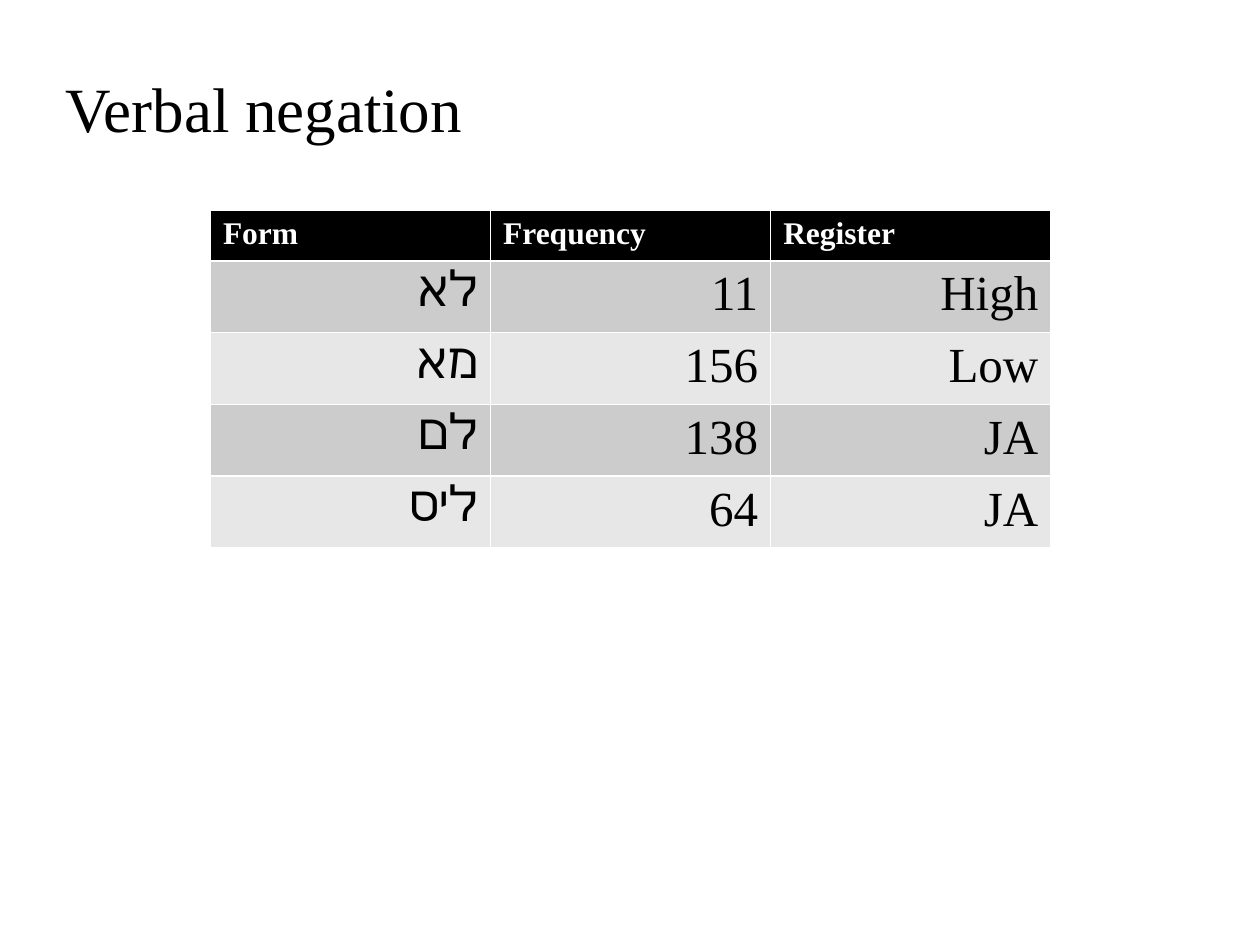
from pptx import Presentation
from pptx.dml.color import RGBColor
from pptx.enum import text
from pptx.util import Inches, Pt

COLORS = {"ink": "000000", "paper": "FFFFFF", "odd": "CCCCCC", "even": "E7E7E7"}
SERIF, HEBREW = "Times New Roman", "Calibri"
HEADINGS = ("Form", "Frequency", "Register")
NEGATIONS = (
    ("לא", "11", "High"),
    ("מא", "156", "Low"),
    ("לם", "138", "JA"),
    ("ליס", "64", "JA"),
)


def write(frame, words, size, font=SERIF, color="ink", bold=False, align=None):
    """Put one formatted run of words into a text frame."""
    paragraph = frame.paragraphs[0]
    paragraph.alignment = align
    run = paragraph.add_run()
    run.text = words
    run.font.size = Pt(size)
    run.font.name = font
    run.font.bold = bold
    run.font.color.rgb = RGBColor.from_string(COLORS[color])


def fill_cell(cell, color):
    """Give a table cell a solid fill."""
    cell.fill.solid()
    cell.fill.fore_color.rgb = RGBColor.from_string(COLORS[color])


def add_title(slide, left, top, width, height):
    """Place the slide title in the given box."""
    title = slide.shapes.add_textbox(left, top, width, height).text_frame
    title.word_wrap = True
    title.auto_size = text.MSO_AUTO_SIZE.SHAPE_TO_FIT_TEXT
    write(title, "Verbal negation", 36)


def add_negation_table(slide, left, top, width, height):
    """Place the table of negation forms in the given box."""
    table = slide.shapes.add_table(
        len(NEGATIONS) + 1, len(HEADINGS), left, top, width, height
    ).table
    heading_height = Inches(0.39)
    table.rows[0].height = heading_height
    for column, heading in enumerate(HEADINGS):
        cell = table.cell(0, column)
        fill_cell(cell, "ink")
        write(cell.text_frame, heading, 18, color="paper", bold=True)
    for row, negation in enumerate(NEGATIONS, start=1):
        table.rows[row].height = (height - heading_height) // len(NEGATIONS)
        for column, value in enumerate(negation):
            cell = table.cell(row, column)
            fill_cell(cell, "odd" if row % 2 else "even")
            write(cell.text_frame, value, 28, font=SERIF if column else HEBREW,
                  align=text.PP_ALIGN.RIGHT)


def main():
    """Build and save the presentation."""
    deck = Presentation()
    deck.slide_width, deck.slide_height = Inches(10), Inches(7.5)
    slide = deck.slides.add_slide(deck.slide_layouts[6])
    add_title(slide, Inches(0.42), Inches(0.5), Inches(8.27), Inches(0.71))
    add_negation_table(slide, Inches(1.67), Inches(1.67), Inches(6.67), Inches(2.67))
    deck.save("out.pptx")


if __name__ == "__main__":
    main()
